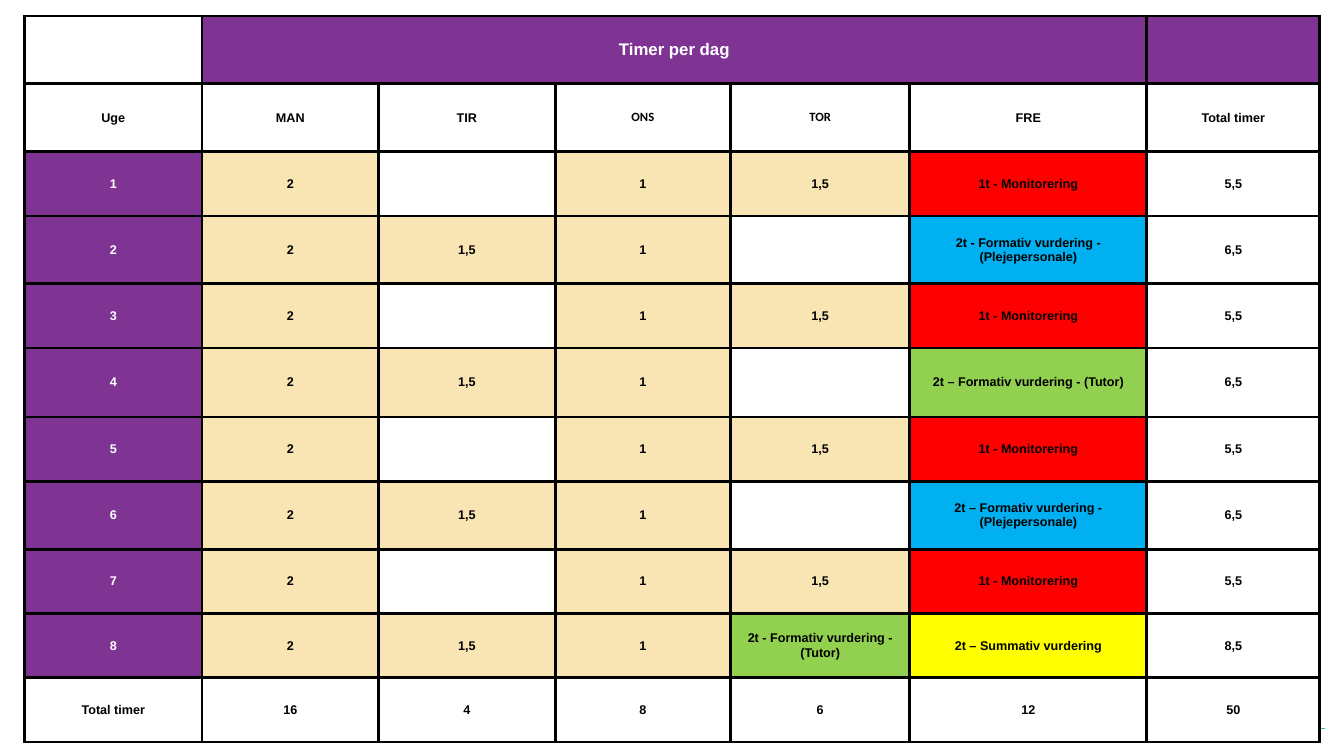
from dataclasses import dataclass

from lxml.etree import SubElement
from pptx import Presentation
from pptx.dml.color import RGBColor
from pptx.enum.shapes import MSO_CONNECTOR
from pptx.enum.text import MSO_ANCHOR, PP_ALIGN
from pptx.oxml.ns import qn
from pptx.slide import Slide
from pptx.table import _Cell
from pptx.util import Cm, Pt

COLORS = {
    "white": "FFFFFF",
    "black": "000000",
    "purple": "7F3494",
    "sand": "F9E5B4",
    "red": "FF0000",
    "blue": "00B0F0",
    "green": "92D050",
    "yellow": "FFFF00",
    "teal": "24BAA2",
}
ACTIVITY_FILLS = {
    "Monitorering": "red",
    "Plejepersonale": "blue",
    "Tutor": "green",
    "Summativ": "yellow",
}
COLUMN_WIDTHS = [4.47, 4.45, 4.45, 4.42, 4.52, 5.97, 4.36]
ROW_HEIGHTS = [1.71, 1.71, 1.62, 1.71, 1.62, 1.74, 1.62, 1.71, 1.62, 1.62, 1.62]
DAY_HEADINGS = ["Uge", "MAN", "TIR", "ONS", "TOR", "FRE", "Total timer"]
COLUMN_TOTALS = ["Total timer", "16", "4", "8", "6", "12", "50"]


@dataclass(frozen=True)
class Week:
    """Hours that differ from one week to the next."""

    tuesday: str
    thursday: str
    friday: str
    total: str


WEEKS = [
    Week("", "1,5", "1t - Monitorering", "5,5"),
    Week("1,5", "", "2t - Formativ vurdering - (Plejepersonale)", "6,5"),
    Week("", "1,5", "1t - Monitorering", "5,5"),
    Week("1,5", "", "2t – Formativ vurdering - (Tutor)", "6,5"),
    Week("", "1,5", "1t - Monitorering", "5,5"),
    Week("1,5", "", "2t – Formativ vurdering - (Plejepersonale)", "6,5"),
    Week("", "1,5", "1t - Monitorering", "5,5"),
    Week("1,5", "2t - Formativ vurdering - (Tutor)", "2t – Summativ vurdering", "8,5"),
]


def color(name: str) -> RGBColor:
    """Look up a named colour."""
    return RGBColor.from_string(COLORS[name])


def add_borders(cell: _Cell) -> None:
    """Draw a black line on all four sides of a cell."""
    properties = cell._tc.get_or_add_tcPr()
    for side in ("lnL", "lnR", "lnT", "lnB"):
        line = SubElement(properties, qn(f"a:{side}"), w=str(Pt(2.25)))
        fill = SubElement(line, qn("a:solidFill"))
        SubElement(fill, qn("a:srgbClr"), val=COLORS["black"])


def write_cell(cell: _Cell, text: str, *, fill: str = "white", ink: str = "black",
               size: float = 9, font: str = "Arial") -> None:
    """Fill, frame and write one table cell."""
    add_borders(cell)
    cell.fill.solid()
    cell.fill.fore_color.rgb = color(fill)
    cell.vertical_anchor = MSO_ANCHOR.MIDDLE
    cell.margin_left = cell.margin_right = Cm(0.18)
    cell.margin_top = cell.margin_bottom = 0
    if not text:
        return
    para = cell.text_frame.paragraphs[0]
    para.alignment = PP_ALIGN.CENTER
    span = para.add_run()
    span.text = text
    span.font.name = font
    span.font.size = Pt(size)
    span.font.bold = True
    span.font.color.rgb = color(ink)


def day_fill(text: str) -> str:
    """Choose the fill for a day from what is planned on it."""
    for activity, fill in ACTIVITY_FILLS.items():
        if activity in text:
            return fill
    return "sand" if text else "white"


def add_footer_line(page: Slide) -> None:
    """Draw the short teal line at the lower right edge."""
    line = page.shapes.add_connector(
        MSO_CONNECTOR.STRAIGHT, Cm(33.38), Cm(18.36), Cm(32.74), Cm(18.36))
    line.line.color.rgb = color("teal")
    line.line.width = Pt(0.75)
    SubElement(line._element.spPr, qn("a:effectLst"))


def add_timetable(page: Slide) -> None:
    """Build the timetable of hours per day and week."""
    table = page.shapes.add_table(
        len(ROW_HEIGHTS), len(COLUMN_WIDTHS), Cm(0.62), Cm(0.4),
        Cm(sum(COLUMN_WIDTHS)), Cm(sum(ROW_HEIGHTS))).table
    table.first_row = table.horz_banding = False
    for column, width in zip(table.columns, COLUMN_WIDTHS):
        column.width = Cm(width)
    for row, height in zip(table.rows, ROW_HEIGHTS):
        row.height = Cm(height)

    table.cell(0, 1).merge(table.cell(0, 5))
    for index in range(len(COLUMN_WIDTHS)):
        write_cell(table.cell(0, index), "Timer per dag" if index == 1 else "",
                   fill="purple" if index else "white", ink="white", size=12)

    last_row = len(ROW_HEIGHTS) - 1
    for index, (heading, total) in enumerate(zip(DAY_HEADINGS, COLUMN_TOTALS)):
        write_cell(table.cell(1, index), heading,
                   font="Calibri" if heading in ("ONS", "TOR") else "Arial")
        write_cell(table.cell(last_row, index), total)

    for number, week in enumerate(WEEKS, start=1):
        row = number + 1
        write_cell(table.cell(row, 0), str(number), fill="purple", ink="white")
        days = ["2", week.tuesday, "1", week.thursday, week.friday]
        for index, hours in enumerate(days, start=1):
            write_cell(table.cell(row, index), hours, fill=day_fill(hours))
        write_cell(table.cell(row, 6), week.total)


def main() -> None:
    """Create the deck and save it."""
    deck = Presentation()
    deck.slide_width, deck.slide_height = Cm(33.87), Cm(19.05)
    page = deck.slides.add_slide(deck.slide_layouts[6])
    add_footer_line(page)
    add_timetable(page)
    deck.save("out.pptx")


if __name__ == "__main__":
    main()
